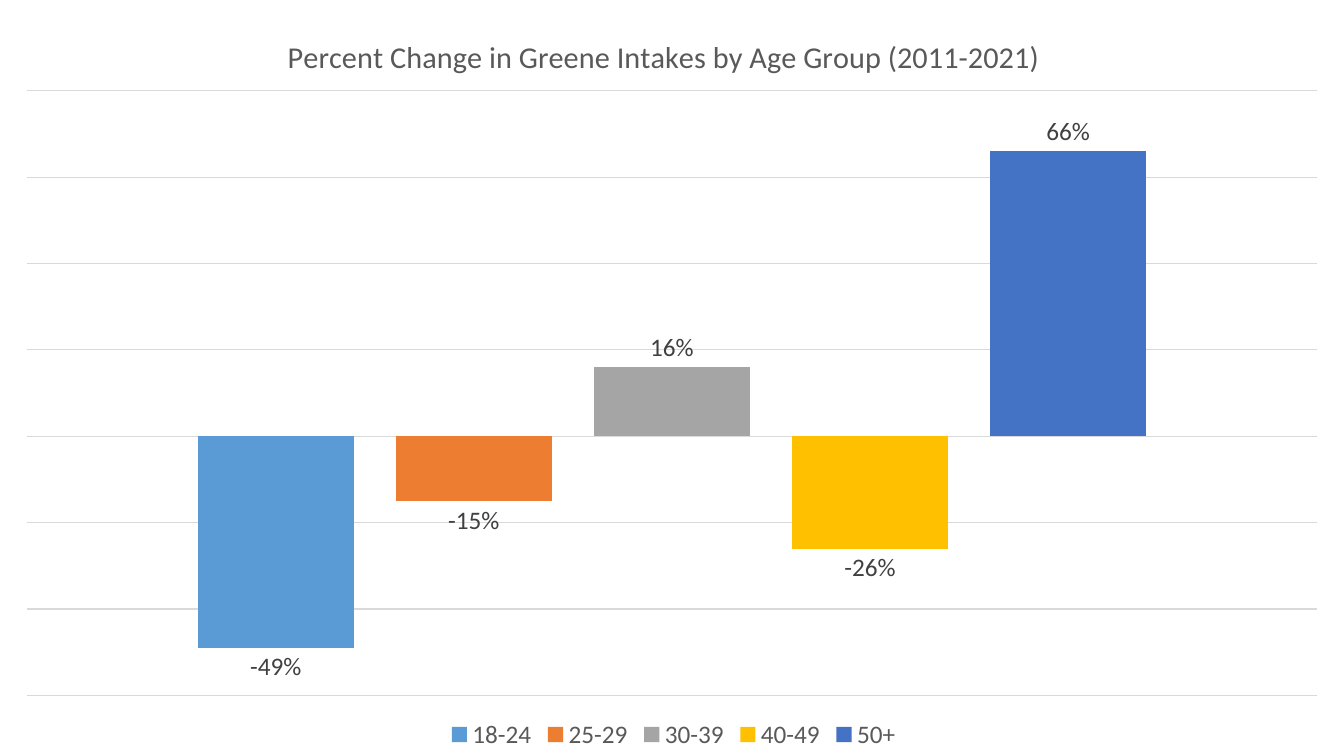
from lxml.etree import SubElement as Sub
from pptx import Presentation as Deck
from pptx.chart.data import CategoryChartData as Data
from pptx.dml.color import RGBColor as Rgb
from pptx.enum.chart import XL_CHART_TYPE as Kind
from pptx.enum.chart import XL_LABEL_POSITION as Spot
from pptx.enum.chart import XL_LEGEND_POSITION as Side
from pptx.oxml.ns import qn
from pptx.util import Inches, Pt

GROUPS = [
    ("18-24", -0.49, "5B9BD5"),
    ("25-29", -0.15, "ED7D31"),
    ("30-39", 0.16, "A5A5A5"),
    ("40-49", -0.26, "FFC000"),
    ("50+", 0.66, "4472C4"),
]


def color(code):
    return Rgb.from_string(code)


def style(font, size=18, ink="595959", face="Calibri", bold=False):
    font.size, font.name, font.bold = Pt(size), face, bold
    font.color.rgb = color(ink)


def write(frame, text, **form):
    run = frame.paragraphs[0].add_run()
    run.text = text
    style(run.font, **form)


def place(part, inner=False, **share):
    """Fix a chart part at shares (x, y, w, h) of the chart's size."""
    for old in part.findall(qn("c:layout")):
        part.remove(old)
    box = part.makeelement(qn("c:layout"))
    lay = Sub(box, qn("c:manualLayout"))
    if inner:
        Sub(lay, qn("c:layoutTarget"), val="inner")
    for key in "xy":
        Sub(lay, qn(f"c:{key}Mode"), val="edge")
    for key, val in share.items():
        Sub(lay, qn(f"c:{key}"), val=str(val))
    # The layout follows the title's text or the legend's position
    lead = [kid for kid in part if kid.tag in (qn("c:tx"), qn("c:legendPos"))]
    part.insert(len(lead), box)


class Page:
    """One slide whose lengths are shares of its size."""

    def __init__(self, wide, high):
        self.deck = Deck()
        self.wide, self.high = Inches(wide), Inches(high)
        self.deck.slide_width, self.deck.slide_height = self.wide, self.high
        self.slide = self.deck.slides.add_slide(self.deck.slide_layouts[6])
        self.grid = "D9D9D9"
        self.ink = "404040"

    def bars(self, groups, x=0, y=0, w=1, h=1):
        data = Data(number_format="0%")
        data.categories = ["1"]
        for name, val, _ in groups:
            data.add_series(name, [val])
        chart = self.slide.shapes.add_chart(
            Kind.COLUMN_CLUSTERED, int(x * self.wide), int(y * self.high),
            int(w * self.wide), int(h * self.high), data).chart
        style(chart.font, ink="000000")
        plot = chart.plots[0]
        plot.gap_width, plot.overlap, plot.vary_by_categories = 219, -27, False
        for bar, (_, _, code) in zip(plot.series, groups):
            bar.format.fill.solid()
            bar.format.fill.fore_color.rgb = color(code)
            bar.invert_if_negative = False
            tags = bar.data_labels
            tags.show_value, tags.position = True, Spot.OUTSIDE_END
            tags.number_format, tags.number_format_is_linked = "0%", False
            style(tags.font, ink=self.ink)
        return chart

    def axes(self, chart, low, high, step):
        chart.category_axis.visible = False
        axis = chart.value_axis
        axis.minimum_scale, axis.maximum_scale = low, high
        axis.major_unit = step
        axis.has_major_gridlines = True
        line = axis.major_gridlines.format.line
        line.color.rgb, line.width = color(self.grid), Pt(0.75)
        axis.visible = False

    def title(self, chart, text, x, y):
        chart.has_title = True
        head = chart.chart_title
        write(head.text_frame, text, size=21.6)
        head.include_in_layout = False
        place(head._element, x=x, y=y)

    def legend(self, chart, x, y):
        chart.has_legend = True
        key = chart.legend
        key.position, key.include_in_layout = Side.BOTTOM, False
        style(key.font)
        place(key._element, x=x, y=y)


def main():
    page = Page(13.33, 7.5)

    # Columns, one series per age group
    chart = page.bars(GROUPS)
    page.axes(chart, -0.6, 0.8, 0.2)
    area = chart.plots[0]._element.getparent()
    place(area, inner=True, x=0.02, y=0.12, w=0.96, h=0.8)

    # Heading and key
    page.title(chart, "Percent Change in Greene Intakes by Age Group (2011-2021)",
               x=0.21, y=0.04)
    page.legend(chart, x=0.33, y=0.95)

    page.deck.save("out.pptx")


if __name__ == "__main__":
    main()
